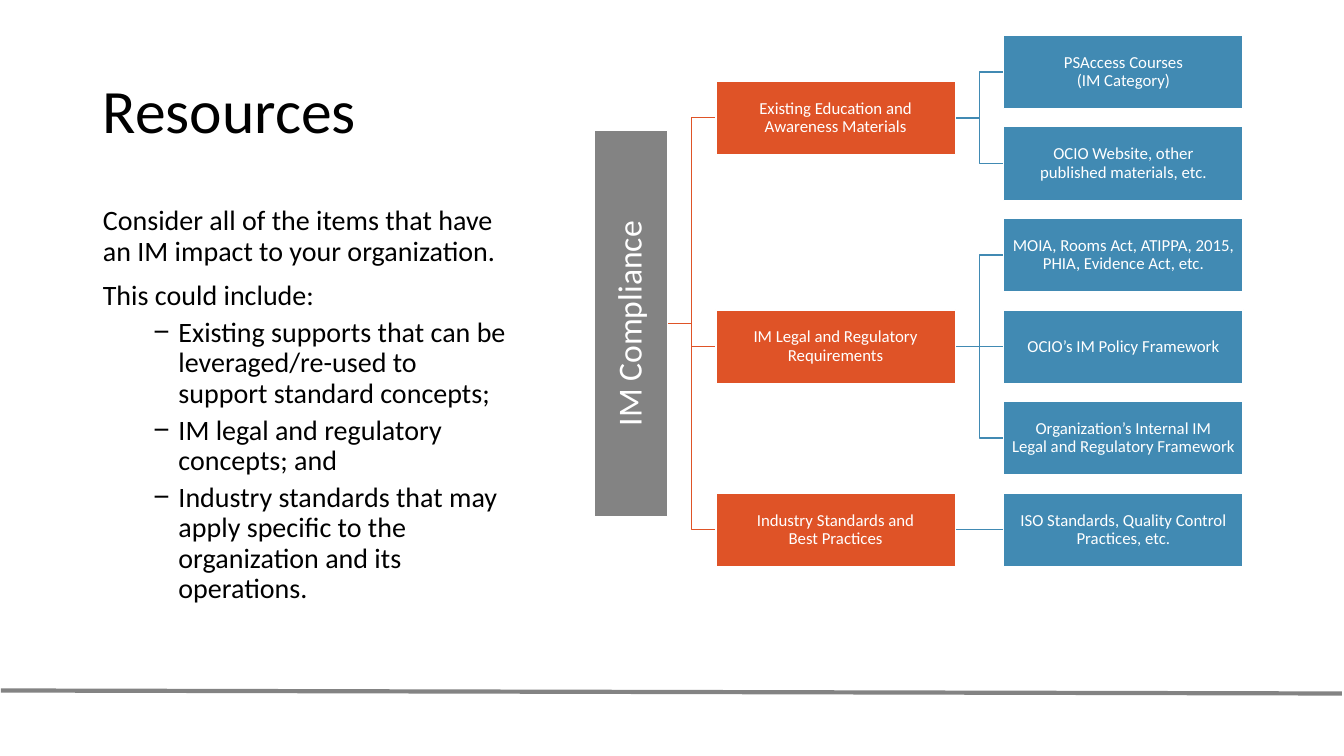
from lxml.etree import SubElement
from pptx import Presentation
from pptx.dml.color import RGBColor
from pptx.enum.shapes import MSO_CONNECTOR as Connector, MSO_SHAPE as Shape
from pptx.enum.text import MSO_ANCHOR as Anchor, MSO_AUTO_SIZE as AutoSize, PP_ALIGN as Align
from pptx.oxml.ns import qn
from pptx.util import Inches, Pt

FONT = "Calibri"
COLORS = {"text": "000000", "white": "FFFFFF", "root": "838383",
          "branch": "DF5327", "leaf": "418AB3"}
INTRO = ["Consider all of the items that have an IM impact to your organization.",
         "This could include:"]
ITEMS = ["Existing supports that can be leveraged/re-used to support standard concepts;",
         "IM legal and regulatory concepts; and",
         "Industry standards that may apply specific to the organization and its operations."]
ROOT = "IM Compliance"
BRANCHES = {
    "Existing Education and\vAwareness Materials": [
        "PSAccess Courses\v(IM Category)",
        "OCIO Website, other\vpublished materials, etc."],
    "IM Legal and Regulatory Requirements": [
        "MOIA, Rooms Act, ATIPPA, 2015, PHIA, Evidence Act, etc.",
        "OCIO’s IM Policy Framework",
        "Organization’s Internal IM\vLegal and Regulatory Framework"],
    "Industry Standards and\vBest Practices": [
        "ISO Standards, Quality Control Practices, etc."],
}


def color(name):
    return RGBColor.from_string(COLORS[name])


def style(para, size, ink, align):
    para.alignment = align
    para.line_spacing = 0.9
    para.font.name = FONT
    para.font.size = Pt(size)
    para.font.color.rgb = color(ink)


def place(shape, box):
    shape.left, shape.top, shape.width, shape.height = map(Inches, box)


def add_title(page, box):
    title = page.shapes.title
    place(title, box)
    title.text_frame.text = "Resources"
    title.text_frame.vertical_anchor = Anchor.MIDDLE
    title.text_frame.auto_size = AutoSize.NONE
    style(title.text_frame.paragraphs[0], 44, "text", Align.LEFT)


def add_body(page, box):
    body = page.placeholders[1]
    place(body, box)
    frame = body.text_frame
    frame.text = "\n".join(INTRO + ITEMS)
    frame.auto_size = AutoSize.NONE
    for index, para in enumerate(frame.paragraphs):
        is_item = index >= len(INTRO)
        para.level = int(is_item)
        para.space_before = Pt(0 if index == 0 else 5 if is_item else 10)
        props = para._p.get_or_add_pPr()
        props.set("marL", str(Inches(0.75 if is_item else 0)))
        props.set("indent", str(Inches(-0.25 if is_item else 0)))
        if is_item:
            SubElement(props, qn("a:buChar"), char="−")
        else:
            SubElement(props, qn("a:buNone"))
        style(para, 20, "text", Align.LEFT)


def add_line(page, kind, ends, ink, width):
    line = page.shapes.add_connector(kind, *ends)
    line.line.color.rgb = color(ink)
    line.line.width = Pt(width)
    SubElement(line._element.spPr, qn("a:effectLst"))
    return line


def add_node(page, box, text, fill, size=12):
    node = page.shapes.add_shape(Shape.RECTANGLE, *map(Inches, box))
    node.shadow.inherit = False
    node.fill.solid()
    node.fill.fore_color.rgb = color(fill)
    node.line.color.rgb = color("white")
    node.line.width = Pt(1)
    frame = node.text_frame
    frame.text = text
    frame.word_wrap = True
    frame.vertical_anchor = Anchor.MIDDLE
    frame.margin_left = frame.margin_right = Inches(0.01)
    frame.margin_top = frame.margin_bottom = Inches(0.01)
    style(frame.paragraphs[0], size, "white", Align.CENTER)
    return node


def join(page, parent, child, ink):
    """Link two nodes with a line that lies behind them."""
    drop = child.top + child.height // 2 - parent.top - parent.height // 2
    kind = Connector.ELBOW if abs(drop) > Inches(0.02) else Connector.STRAIGHT
    line = add_line(page, kind, (0, 0, 0, 0), ink, 1)
    line.begin_connect(parent, 3)
    line.end_connect(child, 1)
    line._element.getparent().insert(2, line._element)


def add_tree(page, box):
    left, top, width, height = box
    bar, gap, root_height = 0.73, 0.48, 3.83
    node_width = (width - bar - 2 * gap) / 2
    branch_left = left + bar + gap
    leaf_left = branch_left + node_width + gap
    pitch = (height - bar) / (sum(map(len, BRANCHES.values())) - 1)

    row, branches = 0, []
    for name, leaves in BRANCHES.items():
        middle_row = row + (len(leaves) - 1) / 2
        branch = add_node(page, (branch_left, top + middle_row * pitch, node_width, bar),
                          name, "branch")
        branches.append(branch)
        for text in leaves:
            leaf = add_node(page, (leaf_left, top + row * pitch, node_width, bar),
                            text, "leaf")
            join(page, branch, leaf, "leaf")
            row += 1

    first, last = branches[0], branches[-1]
    middle = (first.top + last.top + last.height) / 2 / Inches(1)
    root = add_node(page, (left, middle - root_height / 2, bar, root_height),
                    ROOT, "root", 24)
    root.text_frame._txBody.bodyPr.set("vert", "vert270")
    for branch in branches:
        join(page, root, branch, "branch")


def main():
    deck = Presentation()
    deck.slide_width, deck.slide_height = Inches(13.33), Inches(7.5)
    page = deck.slides.add_slide(deck.slide_layouts[1])
    add_title(page, (0.92, 0.4, 11.5, 1.45))
    add_body(page, (0.92, 2, 4.26, 4.76))
    add_tree(page, (5.89, 0.35, 6.44, 5.27))
    add_line(page, Connector.STRAIGHT, map(Inches, (0.01, 6.85, 13.31, 6.88)), "root", 3)
    deck.save("out.pptx")


if __name__ == "__main__":
    main()
